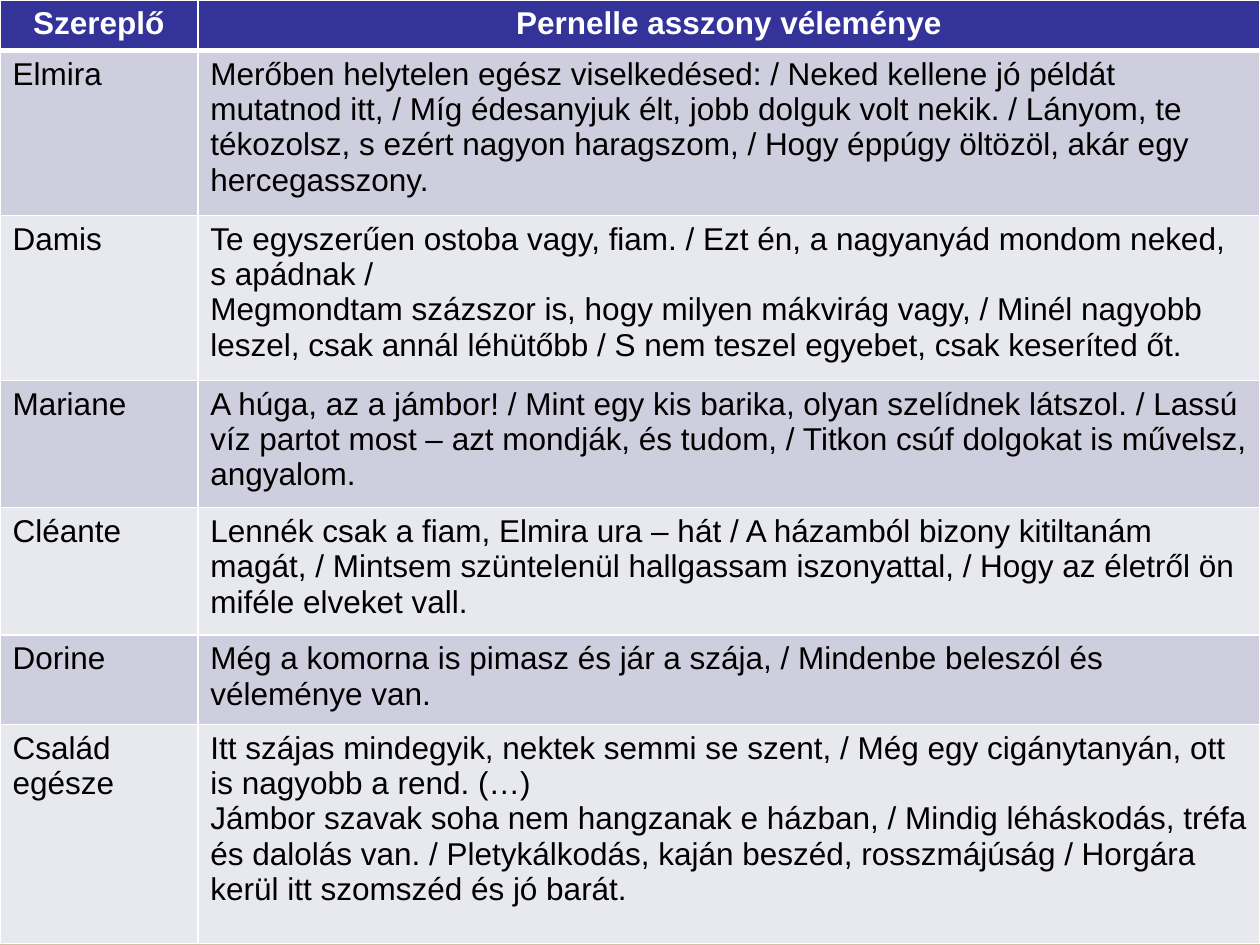
import copy
from dataclasses import dataclass

import lxml.etree
import pptx
import pptx.dml.color
import pptx.enum.text
import pptx.oxml.ns
import pptx.slide
import pptx.table
import pptx.util

Inches = pptx.util.Inches
RGBColor = pptx.dml.color.RGBColor


@dataclass(frozen=True)
class Theme:
    font: str = "Arial"
    text_size: int = 18
    header_fill: str = "333399"
    header_text: str = "FFFFFF"
    body_text: str = "000000"
    band_fills: tuple[str, str] = ("CECEDE", "E8E8EF")
    border: str = "FFFFFF"
    thin_border: int = 1
    header_border: int = 3
    background: tuple[tuple[float, str], ...] = (
        (0, "FFEFD1"),
        (0.65, "F0EBD5"),
        (1, "D1C39F"),
    )


@dataclass(frozen=True)
class Opinion:
    character: str
    quote: str
    height: float


THEME = Theme()
COLUMN_WIDTHS = (1.57, 8.43)
HEADER = Opinion("Szereplő", "Pernelle asszony véleménye", 0.4)
OPINIONS = (
    Opinion(
        "Elmira",
        "Merőben helytelen egész viselkedésed: / Neked kellene jó példát mutatnod itt, "
        "/ Míg édesanyjuk élt, jobb dolguk volt nekik. / Lányom, te tékozolsz, s ezért "
        "nagyon haragszom, / Hogy éppúgy öltözöl, akár egy hercegasszony.",
        1.31,
    ),
    Opinion(
        "Damis",
        "Te egyszerűen ostoba vagy, fiam. / Ezt én, a nagyanyád mondom neked, s apádnak / "
        "\vMegmondtam százszor is, hogy milyen mákvirág vagy, / Minél nagyobb leszel, "
        "csak annál léhütőbb / S nem teszel egyebet, csak keseríted őt.",
        1.31,
    ),
    Opinion(
        "Mariane",
        "A húga, az a jámbor! / Mint egy kis barika, olyan szelídnek látszol. / Lassú víz "
        "partot most – azt mondják, és tudom, / Titkon csúf dolgokat is művelsz, angyalom.",
        1.01,
    ),
    Opinion(
        "Cléante",
        "Lennék csak a fiam, Elmira ura – hát / A házamból bizony kitiltanám magát, / "
        "Mintsem szüntelenül hallgassam iszonyattal, / Hogy az életről ön miféle elveket vall.",
        1.01,
    ),
    Opinion(
        "Dorine",
        "Még a komorna is pimasz és jár a szája, / Mindenbe beleszól és véleménye van.",
        0.71,
    ),
    Opinion(
        "Család egésze",
        "Itt szájas mindegyik, nektek semmi se szent, / Még egy cigánytanyán, ott is nagyobb "
        "a rend. (…)\nJámbor szavak soha nem hangzanak e házban, / Mindig léháskodás, tréfa és "
        "dalolás van. / Pletykálkodás, kaján beszéd, rosszmájúság / Horgára kerül itt szomszéd "
        "és jó barát.",
        1.74,
    ),
)


def paint_background(slide: pptx.slide.Slide) -> None:
    fill = slide.background.fill
    fill.gradient()
    fill.gradient_angle = 270
    stop_list = slide.background._cSld.find(".//" + pptx.oxml.ns.qn("a:gsLst"))
    stop_list.append(copy.deepcopy(stop_list[-1]))
    for stop, (position, color) in zip(fill.gradient_stops, THEME.background):
        stop.position = position
        stop.color.rgb = RGBColor.from_string(color)


def set_borders(cell: pptx.table._Cell, top: int, bottom: int) -> None:
    properties = cell._tc.get_or_add_tcPr()
    widths = {"lnL": THEME.thin_border, "lnR": THEME.thin_border, "lnT": top, "lnB": bottom}
    for index, (side, width) in enumerate(widths.items()):
        line = lxml.etree.Element(pptx.oxml.ns.qn(f"a:{side}"), w=str(pptx.util.Pt(width)))
        solid = lxml.etree.SubElement(line, pptx.oxml.ns.qn("a:solidFill"))
        lxml.etree.SubElement(solid, pptx.oxml.ns.qn("a:srgbClr"), val=THEME.border)
        properties.insert(index, line)


def fill_cell(cell: pptx.table._Cell, text: str, row_index: int) -> None:
    is_header = row_index == 0
    fill_color = THEME.header_fill if is_header else THEME.band_fills[(row_index - 1) % 2]
    cell.fill.solid()
    cell.fill.fore_color.rgb = RGBColor.from_string(fill_color)
    set_borders(
        cell,
        top=THEME.header_border if row_index == 1 else THEME.thin_border,
        bottom=THEME.header_border if is_header else THEME.thin_border,
    )
    cell.text_frame.text = text
    for paragraph in cell.text_frame.paragraphs:
        if is_header:
            paragraph.alignment = pptx.enum.text.PP_ALIGN.CENTER
        for run in paragraph.runs:
            run.font.name = THEME.font
            run.font.size = pptx.util.Pt(THEME.text_size)
            run.font.bold = is_header
            run.font.color.rgb = RGBColor.from_string(
                THEME.header_text if is_header else THEME.body_text
            )


def add_opinion_table(slide: pptx.slide.Slide) -> None:
    opinions = (HEADER, *OPINIONS)
    table = slide.shapes.add_table(
        len(opinions), len(COLUMN_WIDTHS), Inches(0), Inches(0), Inches(10), Inches(7.5)
    ).table
    for column, width in zip(table.columns, COLUMN_WIDTHS):
        column.width = Inches(width)
    for row_index, opinion in enumerate(opinions):
        table.rows[row_index].height = Inches(opinion.height)
        for column_index, text in enumerate((opinion.character, opinion.quote)):
            fill_cell(table.cell(row_index, column_index), text, row_index)


def main() -> None:
    presentation = pptx.Presentation()
    presentation.slide_width = Inches(10)
    presentation.slide_height = Inches(7.5)
    slide = presentation.slides.add_slide(presentation.slide_layouts[6])
    paint_background(slide)
    add_opinion_table(slide)
    presentation.save("out.pptx")


if __name__ == "__main__":
    main()
